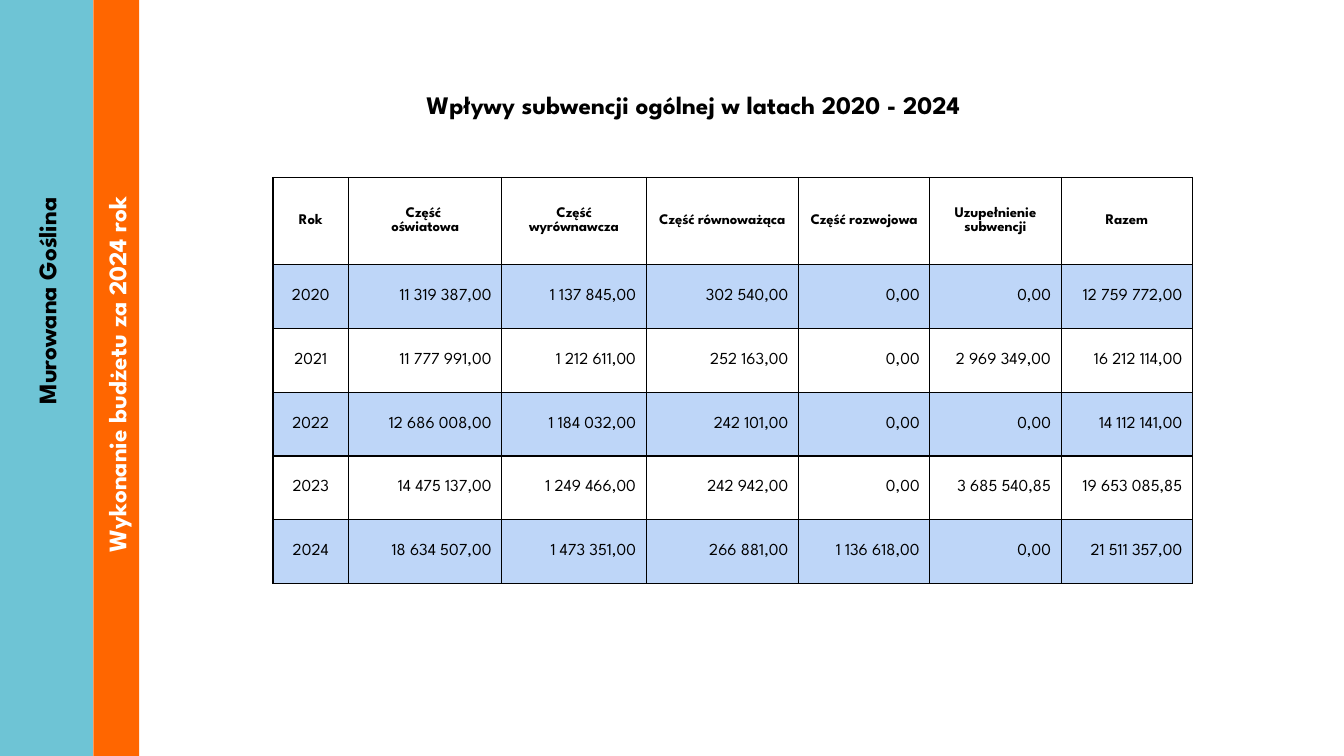
from lxml import etree
from pptx import Presentation
from pptx.dml.color import RGBColor
from pptx.enum.shapes import MSO_SHAPE
from pptx.enum.text import MSO_ANCHOR, PP_ALIGN
from pptx.oxml.ns import qn
from pptx.util import Pt

RECTANGLE = MSO_SHAPE.RECTANGLE
MIDDLE = MSO_ANCHOR.MIDDLE
CENTER, RIGHT, LEFT = PP_ALIGN.CENTER, PP_ALIGN.RIGHT, PP_ALIGN.LEFT

WIDTH, HEIGHT = 960, 540
LABEL_HEIGHT = 28.8
COLORS = {"teal": "6EC4D5", "orange": "FF6600", "black": "000000",
          "white": "FFFFFF", "stripe": "BED6F8"}
HEADING = {"name": "League Spartan", "size": Pt(18), "bold": True}
HEADER = {"name": "League Spartan", "size": Pt(10.5), "bold": True}
BODY = {"name": "League Spartan", "size": Pt(12), "bold": False}

COLUMN_WIDTHS = [54, 109.4, 103.2, 108.8, 93.8, 93.8, 93.8]
ROW_HEIGHTS = [62.4] + [45.5] * 5
ROWS = [
    ["Rok", "Część \noświatowa", "Część wyrównawcza", "Część równoważąca",
     "Część rozwojowa", "Uzupełnienie subwencji", "Razem"],
    ["2020", "11 319 387,00", "1 137 845,00", "302 540,00", "0,00", "0,00", "12 759 772,00"],
    ["2021", "11 777 991,00", "1 212 611,00", "252 163,00", "0,00", "2 969 349,00", "16 212 114,00"],
    ["2022", "12 686 008,00", "1 184 032,00", "242 101,00", "0,00", "0,00", "14 112 141,00"],
    ["2023", "14 475 137,00", "1 249 466,00", "242 942,00", "0,00", "3 685 540,85", "19 653 085,85"],
    ["2024", "18 634 507,00", "1 473 351,00", "266 881,00", "1 136 618,00", "0,00", "21 511 357,00"],
]


def rgb(name):
    return RGBColor.from_string(COLORS[name])


def write_text(text_frame, text, font_format, color, alignment):
    text_frame.text = text
    for paragraph in text_frame.paragraphs:
        paragraph.alignment = alignment
        for name, value in font_format.items():
            setattr(paragraph.font, name, value)
        paragraph.font.color.rgb = rgb(color)


def add_heading(slide, left, top, width, text, color):
    shape = slide.shapes.add_textbox(Pt(left), Pt(top), Pt(width), Pt(LABEL_HEIGHT))
    shape.text_frame.word_wrap = True
    write_text(shape.text_frame, text, HEADING, color, LEFT)
    return shape


def add_side_band(slide, left, width, fill, text, color, text_start, text_length):
    band = slide.shapes.add_shape(RECTANGLE, Pt(left), Pt(0), Pt(width), Pt(HEIGHT))
    band.shadow.inherit = False
    band.fill.solid()
    band.fill.fore_color.rgb = rgb(fill)
    band.line.fill.background()
    label_left = left + (width - text_length) / 2
    label_top = text_start - (text_length + LABEL_HEIGHT) / 2
    label = add_heading(slide, label_left, label_top, text_length, text, color)
    label.rotation = 270


def add_borders(cell):
    properties = cell._tc.get_or_add_tcPr()
    for side in ("a:lnL", "a:lnR", "a:lnT", "a:lnB"):
        line = etree.SubElement(properties, qn(side), w=str(Pt(1)))
        fill = etree.SubElement(line, qn("a:solidFill"))
        etree.SubElement(fill, qn("a:srgbClr"), val=COLORS["black"])


def add_subsidy_table(slide, left, top):
    frame = slide.shapes.add_table(len(ROWS), len(COLUMN_WIDTHS), Pt(left), Pt(top),
                                   Pt(sum(COLUMN_WIDTHS)), Pt(sum(ROW_HEIGHTS)))
    table = frame.table
    table.horz_banding = False
    for column, width in zip(table.columns, COLUMN_WIDTHS):
        column.width = Pt(width)
    for row, height in zip(table.rows, ROW_HEIGHTS):
        row.height = Pt(height)
    for row_index, values in enumerate(ROWS):
        for column_index, value in enumerate(values):
            cell = table.cell(row_index, column_index)
            cell.vertical_anchor = MIDDLE
            add_borders(cell)
            if row_index % 2:
                cell.fill.solid()
                cell.fill.fore_color.rgb = rgb("stripe")
            else:
                cell.fill.background()
            is_header = row_index == 0
            write_text(cell.text_frame, value, HEADER if is_header else BODY, "black",
                       CENTER if is_header or column_index == 0 else RIGHT)


def main():
    presentation = Presentation()
    presentation.slide_width, presentation.slide_height = Pt(WIDTH), Pt(HEIGHT)
    slide = presentation.slides.add_slide(presentation.slide_layouts[6])
    add_side_band(slide, 0, 66.4, "teal", "Murowana Goślina", "black", 296, 181.4)
    add_side_band(slide, 66.8, 32.6, "orange", "Wykonanie budżetu za 2024 rok",
                  "white", 401.4, 389.6)
    add_heading(slide, 297.4, 60.5, 434.8, "Wpływy subwencji ogólnej w latach 2020 - 2024", "black")
    add_subsidy_table(slide, 195, 126.8)
    presentation.save("out.pptx")


if __name__ == "__main__":
    main()
